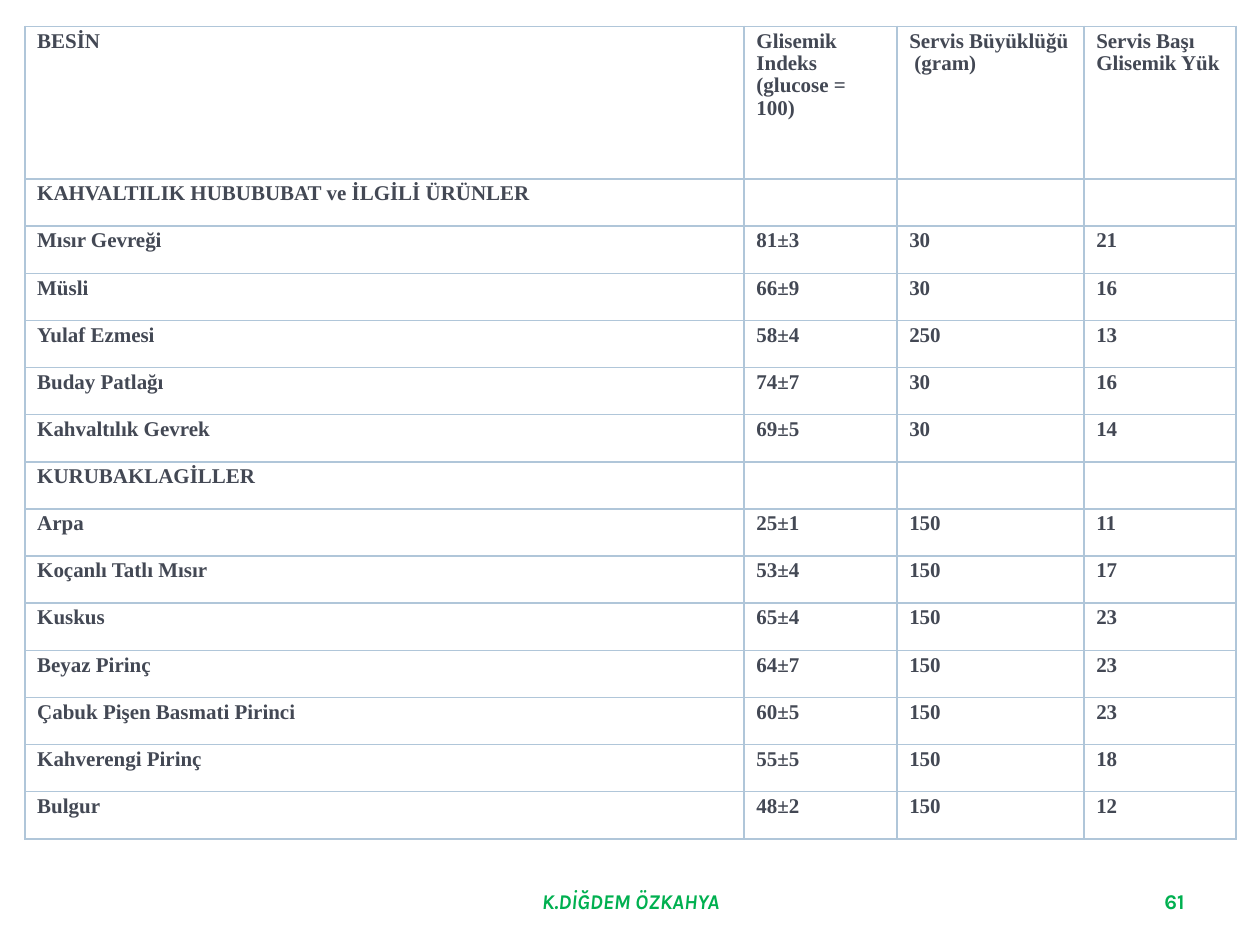
from lxml.etree import SubElement
from pptx import Presentation
from pptx.dml.color import RGBColor
from pptx.enum.text import MSO_ANCHOR, PP_ALIGN
from pptx.oxml.ns import qn
from pptx.util import Cm, Pt

HUES = {"ink": "434854", "edge": "B0C6D9", "cell": "FFFFFF", "foot": "00B050"}

HEAD = ("BESİN", "Glisemik Indeks\v(glucose = 100)",
        "Servis Büyüklüğü  (gram)", "Servis Başı Glisemik Yük")
FOODS = [
    ("KAHVALTILIK HUBUBUBAT ve İLGİLİ ÜRÜNLER", "", "", ""),
    ("Mısır Gevreği", "81±3", "30", "21"),
    ("Müsli", "66±9", "30", "16"),
    ("Yulaf Ezmesi", "58±4", "250", "13"),
    ("Buday Patlağı", "74±7", "30", "16"),
    ("Kahvaltılık Gevrek", "69±5", "30", "14"),
    ("KURUBAKLAGİLLER", "", "", ""),
    ("Arpa", "25±1", "150", "11"),
    ("Koçanlı Tatlı Mısır", "53±4", "150", "17"),
    ("Kuskus", "65±4", "150", "23"),
    ("Beyaz Pirinç", "64±7", "150", "23"),
    ("Çabuk Pişen Basmati Pirinci", "60±5", "150", "23"),
    ("Kahverengi Pirinç", "55±5", "150", "18"),
    ("Bulgur", "48±2", "150", "12"),
]


class Page:
    """Holds the style and the current slide."""

    def __init__(self, slide):
        self.slide = slide
        self.size = Pt(12)

    def style(self, para, face, hue, slant=None):
        font = para.font
        font.name, font.size, font.bold, font.italic = face, self.size, True, slant
        font.color.rgb = RGBColor.from_string(HUES[hue])

    def label(self, text, left, width, align, slant=None):
        box = self.slide.shapes.add_textbox(Cm(left), Cm(17.65), Cm(width), Cm(1.02))
        frame = box.text_frame
        frame.word_wrap = True
        frame.vertical_anchor = MSO_ANCHOR.MIDDLE
        para = frame.paragraphs[0]
        para.text = text
        para.alignment = align
        self.style(para, "Karla", "foot", slant)

    def border(self, cell):
        props = cell._tc.get_or_add_tcPr()
        for side in ("a:lnL", "a:lnR", "a:lnT", "a:lnB"):
            line = SubElement(props, qn(side), w=str(Pt(1)))
            fill = SubElement(line, qn("a:solidFill"))
            SubElement(fill, qn("a:srgbClr"), val=HUES["edge"])

    def cell(self, cell, text):
        self.border(cell)
        cell.fill.solid()
        cell.fill.fore_color.rgb = RGBColor.from_string(HUES["cell"])
        cell.margin_left = cell.margin_right = Cm(0.25)
        cell.margin_top = cell.margin_bottom = Cm(0.08)
        para = cell.text_frame.paragraphs[0]
        para.text = text
        para.line_spacing = Pt(12.8)
        self.style(para, "Times New Roman", "ink")

    def table(self, rows, left, top, widths, heights):
        table = self.slide.shapes.add_table(
            len(rows), len(widths), Cm(left), Cm(top),
            Cm(sum(widths)), Cm(sum(heights))).table
        table.first_row = table.horz_banding = False
        for col, width in zip(table.columns, widths):
            col.width = Cm(width)
        for row, height, texts in zip(table.rows, heights, rows):
            row.height = Cm(height)
            for cell, text in zip(row.cells, texts):
                self.cell(cell, text)


def main():
    deck = Presentation()
    deck.slide_width, deck.slide_height = Cm(25.4), Cm(19.05)
    page = Page(deck.slides.add_slide(deck.slide_layouts[6]))

    # Footer and page number
    page.label("K.DİĞDEM ÖZKAHYA", 8.69, 8.05, PP_ALIGN.CENTER, True)
    page.label("61", 18.21, 5.92, PP_ALIGN.RIGHT)

    # Glycemic index table
    page.table([HEAD] + FOODS, 0.5, 0.53, (14.5, 3.08, 3.77, 3.07),
               [3.08] + [0.95] * len(FOODS))

    deck.save("out.pptx")


if __name__ == "__main__":
    main()
